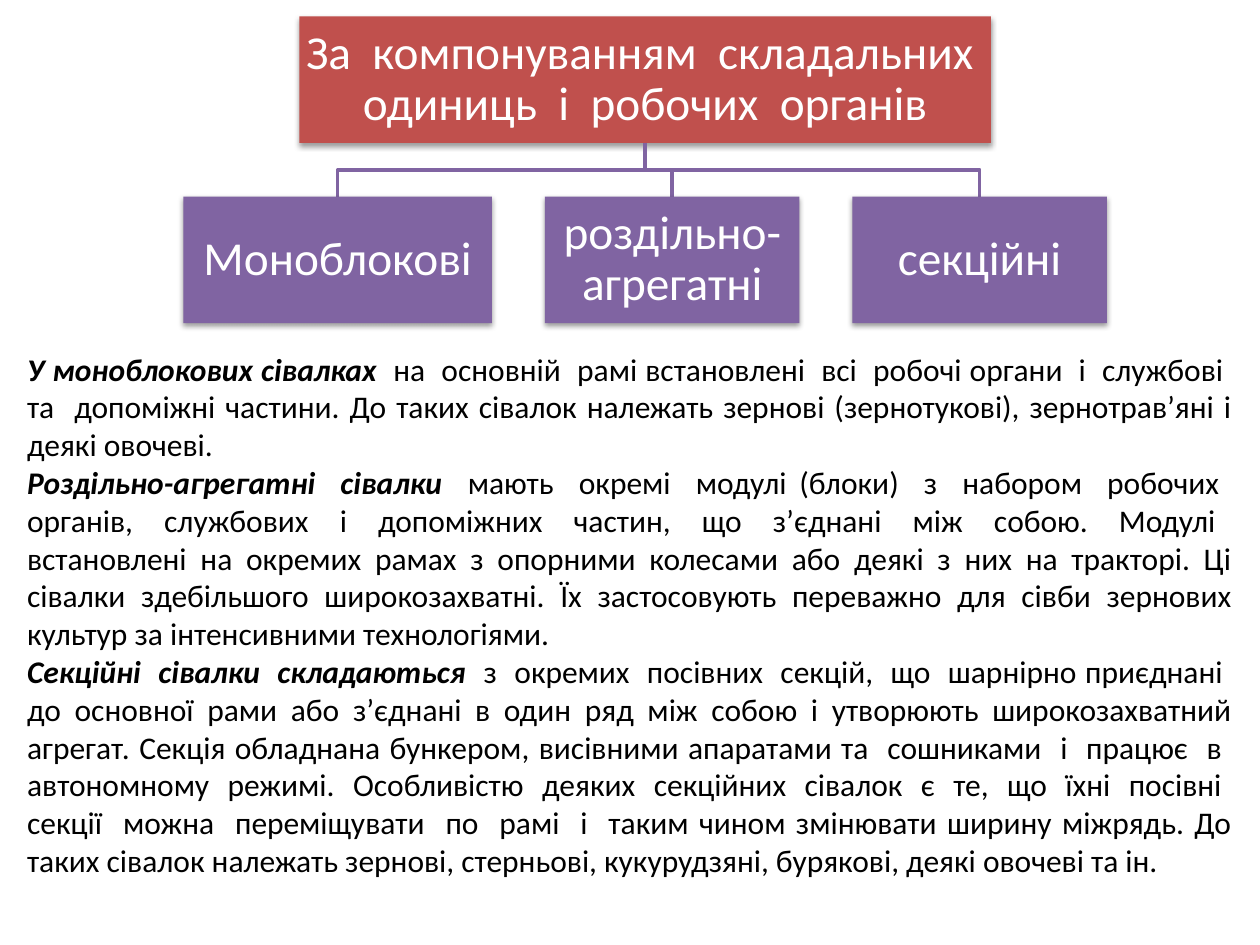
"""Builds a slide that sorts seeders by the layout of their units and working parts."""
from dataclasses import dataclass

from lxml import etree
from pptx import Presentation
from pptx import util as u
from pptx.dml.color import RGBColor
from pptx.enum import shapes, text
from pptx.oxml import ns

COLUMNS, ROWS = 100, 75


@dataclass(frozen=True)
class Theme:
    font: str = "Calibri"
    root: str = "C0504D"
    branch: str = "8064A2"
    label: str = "FFFFFF"
    ink: str = "000000"
    label_size: int = 27
    prose_size: int = 18
    line_width: int = 2


class SlideBuilder:
    def __init__(self, deck, theme):
        self.theme = theme
        self.slide = deck.slides.add_slide(deck.slide_layouts[1])
        self.column = deck.slide_width / COLUMNS
        self.row = deck.slide_height / ROWS

    def place(self, item, left, top, width, height):
        item.left, item.width = (int(n * self.column) for n in (left, width))
        item.top, item.height = (int(n * self.row) for n in (top, height))

    def run(self, paragraph, words, size, color, strong=False):
        run = paragraph.add_run()
        run.text = words
        font = run.font
        font.name, font.size = self.theme.font, u.Pt(size)
        font.bold = font.italic = strong
        font.color.rgb = RGBColor.from_string(color)

    def shade(self, box):
        box.shadow.inherit = False
        effects = box.element.spPr.find(ns.qn("a:effectLst"))
        shadow = etree.SubElement(
            effects, ns.qn("a:outerShdw"), blurRad="40000", dist="20000",
            dir="5400000", rotWithShape="0")
        color = etree.SubElement(shadow, ns.qn("a:srgbClr"), val="000000")
        etree.SubElement(color, ns.qn("a:alpha"), val="38000")

    def box(self, box, words, fill, area):
        self.place(box, *area)
        box.fill.solid()
        box.fill.fore_color.rgb = RGBColor.from_string(fill)
        box.line.fill.background()
        self.shade(box)
        frame = box.text_frame
        frame.word_wrap = True
        frame.auto_size = text.MSO_AUTO_SIZE.NONE
        frame.vertical_anchor = text.MSO_ANCHOR.MIDDLE
        frame.margin_left = frame.margin_right = u.Inches(0.02)
        frame.margin_top = frame.margin_bottom = u.Inches(0.02)
        paragraph = frame.paragraphs[0]
        paragraph.alignment = text.PP_ALIGN.CENTER
        paragraph.line_spacing = 0.9
        self.run(paragraph, words, self.theme.label_size, self.theme.label)

    def root(self, words, *area):
        self.box(self.slide.shapes.title, words, self.theme.root, area)

    def branch(self, words, *area):
        box = self.slide.shapes.add_shape(shapes.MSO_SHAPE.RECTANGLE, 0, 0, 1, 1)
        self.box(box, words, self.theme.branch, area)

    def elbow(self, start_x, start_y, end_x, end_y):
        middle = (start_y + end_y) / 2
        bends = [(start_x, middle), (end_x, middle), (end_x, end_y)]
        outline = self.slide.shapes.build_freeform(
            int(start_x * self.column), int(start_y * self.row))
        outline.add_line_segments(
            [(int(x * self.column), int(y * self.row)) for x, y in bends], close=False)
        link = outline.convert_to_shape()
        link.fill.background()
        link.line.color.rgb = RGBColor.from_string(self.theme.branch)
        link.line.width = u.Pt(self.theme.line_width)
        link.shadow.inherit = False

    def prose(self, entries, *area):
        body = self.slide.placeholders[1]
        self.place(body, *area)
        frame = body.text_frame
        frame.word_wrap = True
        frame.auto_size = text.MSO_AUTO_SIZE.SHAPE_TO_FIT_TEXT
        for index, (term, meaning) in enumerate(entries):
            paragraph = frame.add_paragraph() if index else frame.paragraphs[0]
            paragraph.alignment = text.PP_ALIGN.JUSTIFY
            paragraph.space_before = u.Pt(0)
            properties = paragraph._p.get_or_add_pPr()
            properties.set("marL", "0")
            properties.set("indent", "0")
            etree.SubElement(properties, ns.qn("a:buNone"))
            self.run(paragraph, term, self.theme.prose_size, self.theme.ink, strong=True)
            self.run(paragraph, meaning, self.theme.prose_size, self.theme.ink)


HEADING = "За  компонуванням  складальних  одиниць  і  робочих  органів"
KINDS = [("Моноблокові", 24.5), ("роздільно-агрегатні", 20.2), ("секційні", 20.2)]
DESCRIPTIONS = [
    ("У моноблокових сівалках  ",
     "на  основній  рамі встановлені  всі  робочі органи  і  службові  та  допоміжні "
     "частини. До таких сівалок належать зернові (зернотукові), зернотрав’яні і деякі "
     "овочеві."),
    ("Роздільно-агрегатні  сівалки  ",
     "мають  окремі  модулі (блоки)  з  набором  робочих  органів,  службових  і  "
     "допоміжних  частин,  що  з’єднані  між  собою.  Модулі  встановлені на окремих "
     "рамах з опорними колесами або деякі з них на тракторі. Ці сівалки здебільшого "
     "широкозахватні. Їх застосовують переважно для сівби зернових культур за "
     "інтенсивними технологіями."),
    ("Секційні  сівалки  складаються  ",
     "з  окремих  посівних  секцій,  що  шарнірно приєднані  до основної рами або "
     "з’єднані в один ряд між собою і утворюють широкозахватний агрегат. Секція "
     "обладнана бункером, висівними апаратами та  сошниками  і  працює  в  автономному  "
     "режимі.  Особливістю  деяких  секційних  сівалок  є  те,  що  їхні  посівні  "
     "секції  можна  переміщувати  по  рамі  і  таким чином змінювати ширину міжрядь. "
     "До таких сівалок належать зернові, стерньові, кукурудзяні, бурякові, деякі "
     "овочеві та ін."),
]


def main():
    deck = Presentation()
    deck.slide_width, deck.slide_height = u.Inches(10), u.Inches(7.5)
    builder = SlideBuilder(deck, Theme())

    center, root_width, box_height = 51.2, 54.9, 10.05
    root_top, branch_top, gap = 1.3, 15.6, 4.2
    builder.root(HEADING, center - root_width / 2, root_top, root_width, box_height)

    left = center - (sum(width for _, width in KINDS) + gap * (len(KINDS) - 1)) / 2
    for kind, width in KINDS:
        builder.elbow(center, root_top + box_height, left + width / 2, branch_top)
        builder.branch(kind, left, branch_top, width, box_height)
        left += width + gap

    builder.prose(DESCRIPTIONS, 1.15, 27.25, 97.65, 46.1)
    deck.save("out.pptx")


if __name__ == "__main__":
    main()
